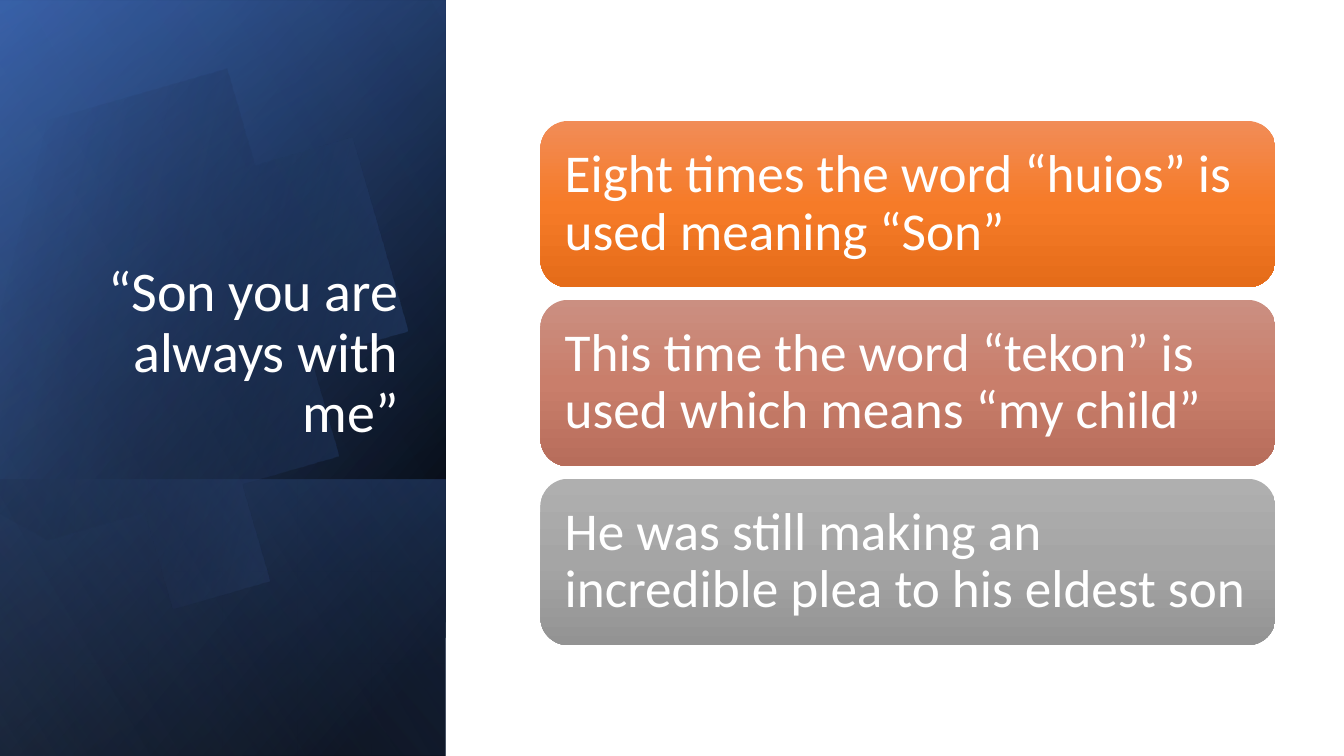
"""Build the slide "Son you are always with me" with a blue side panel and three cards."""
from dataclasses import dataclass
from math import cos, radians, sin

from pptx import Presentation
from pptx.dml.color import RGBColor
from pptx.enum.shapes import MSO_SHAPE as Preset
from pptx.enum.text import MSO_ANCHOR as Anchor, PP_ALIGN as Align
from pptx.oxml import parse_xml
from pptx.oxml.ns import nsdecls, qn
from pptx.util import Inches, Pt

Point = tuple[float, float]
Stop = tuple[float, str, float]


@dataclass
class Gradient:
    angle: float
    stops: list[Stop]


@dataclass
class Panel:
    left: float
    top: float
    width: float
    gradient: Gradient


@dataclass
class Card:
    text: str
    colors: tuple[str, str, str]


PANEL_DEPTH = 4.42
PANELS = [
    Panel(-1.54, 1.54, 7.5, Gradient(50, [(8, "000000", 100), (100, "2F5597", 100)])),
    Panel(-1.54, 1.55, 7.5, Gradient(30, [(0, "000000", 0), (99, "4472C4", 46)])),
    Panel(0.84, 3.92, 2.74, Gradient(130, [(2, "4472C4", 29), (100, "000000", 30)])),
]
TOP_GLOW = Panel(-1.54, 1.54, 7.5, Gradient(120, [(0, "000000", 0), (99, "8FAADC", 11)]))

DISC_TILT = 343.9
DISC_CENTER = (1.585, 3.345)
DISC_GRADIENT = Gradient(30, [(29, "000000", 0), (100, "4472C4", 43)])
DISC_START = (1.49, 1.1)
DISC_SEGMENTS: list[list[Point]] = [
    [(2.46, 1.12), (3.35, 1.77), (3.63, 2.75)],
    [(3.98, 3.97), (3.28, 5.23), (2.07, 5.58)],
    [(1.31, 5.8), (0.53, 5.61), (-0.03, 5.14)],
    [(-0.15, 5.03)],
    [(-0.15, 1.75)],
    [(0, 1.61)],
    [(0.23, 1.42), (0.5, 1.28), (0.8, 1.19)],
    [(1.03, 1.13), (1.26, 1.1), (1.49, 1.1)],
]
CURVE_STEPS = 16

CARDS = [
    Card("Eight times the word “huios” is used meaning “Son”", ("F18C57", "F67B28", "E56C19")),
    Card("This time the word “tekon” is used which means “my child”", ("CB8F81", "C97E6B", "B76D5B")),
    Card("He was still making an incredible plea to his eldest son", ("AFAFAF", "A5A5A5", "939393")),
]
CARD_LEFT, CARD_TOP, CARD_WIDTH, CARD_HEIGHT = 5.36, 1.2, 7.29, 1.65
CARD_PITCH = 1.775


def color(code: str) -> RGBColor:
    """Turn a hex string into a colour."""
    return RGBColor.from_string(code)


def paint(shape, gradient: Gradient) -> None:
    """Fill a shape with a gradient and remove its line and shadow."""
    shape.shadow.inherit = False
    shape.line.fill.background()
    shape.fill.background()
    stops = "".join(
        f'<a:gs pos="{position * 1000}"><a:srgbClr val="{color(code)}">'
        f'<a:alpha val="{opacity * 1000}"/></a:srgbClr></a:gs>'
        for position, code, opacity in gradient.stops
    )
    properties = shape._element.spPr
    properties.replace(properties.find(qn("a:noFill")), parse_xml(
        f'<a:gradFill {nsdecls("a")} rotWithShape="1"><a:gsLst>{stops}</a:gsLst>'
        f'<a:lin ang="{gradient.angle * 60000}" scaled="0"/></a:gradFill>'
    ))


def write(shape, text: str, *, size: float, align: Align, anchor: Anchor,
          side: float, edge: float) -> None:
    """Put white wrapped text into a shape."""
    frame = shape.text_frame
    frame.word_wrap = True
    frame.vertical_anchor = anchor
    frame.margin_left = frame.margin_right = Inches(side)
    frame.margin_top = frame.margin_bottom = Inches(edge)
    paragraph = frame.paragraphs[0]
    paragraph.alignment = align
    paragraph.line_spacing = 0.9
    run = paragraph.add_run()
    run.text = text
    run.font.name = "Calibri"
    run.font.size = Pt(size)
    run.font.color.rgb = color("FFFFFF")


def draw_panel(shapes, panel: Panel) -> None:
    """Draw one mirrored rectangle of the side panel, turned upright."""
    layer = shapes.add_shape(Preset.RECTANGLE, Inches(panel.left), Inches(panel.top),
                             Inches(panel.width), Inches(PANEL_DEPTH))
    layer.rotation = 90
    layer._element.spPr.xfrm.set("flipH", "1")
    paint(layer, panel.gradient)


def untilt(point: Point) -> Point:
    """Turn a point of the disc back to its position before rotation."""
    angle = radians(-DISC_TILT)
    across, down = (value - middle for value, middle in zip(point, DISC_CENTER))
    return (DISC_CENTER[0] + across * cos(angle) - down * sin(angle),
            DISC_CENTER[1] + across * sin(angle) + down * cos(angle))


def bezier(controls: list[Point], t: float) -> Point:
    """Return the point at t on a cubic curve."""
    weights = ((1 - t) ** 3, 3 * t * (1 - t) ** 2, 3 * t ** 2 * (1 - t), t ** 3)
    across, down = (sum(w * value for w, value in zip(weights, axis)) for axis in zip(*controls))
    return across, down


def disc_outline() -> list[Point]:
    """List the points of the cut-off disc."""
    outline = [DISC_START]
    for segment in DISC_SEGMENTS:
        if len(segment) == 1:
            outline += segment
        else:
            controls = [outline[-1], *segment]
            outline += [bezier(controls, step / CURVE_STEPS) for step in range(1, CURVE_STEPS + 1)]
    return [untilt(point) for point in outline]


def draw_disc(shapes) -> None:
    """Draw the tilted disc behind the title."""
    start, *rest = disc_outline()
    builder = shapes.build_freeform(*start, scale=Inches(1))
    builder.add_line_segments(rest, close=True)
    disc = builder.convert_to_shape()
    disc.rotation = DISC_TILT
    paint(disc, DISC_GRADIENT)


def draw_card(shapes, card: Card, top: float) -> None:
    """Draw one rounded card with its statement."""
    box = shapes.add_shape(Preset.ROUNDED_RECTANGLE, Inches(CARD_LEFT), Inches(top),
                           Inches(CARD_WIDTH), Inches(CARD_HEIGHT))
    paint(box, Gradient(90, [(50 * i, code, 100) for i, code in enumerate(card.colors)]))
    write(box, card.text, size=38, align=Align.LEFT, anchor=Anchor.MIDDLE, side=0.16, edge=0.16)


def main() -> None:
    """Assemble and save the slide."""
    deck = Presentation()
    deck.slide_width, deck.slide_height = Inches(13.33), Inches(7.5)
    shapes = deck.slides.add_slide(deck.slide_layouts[6]).shapes
    for panel in PANELS:
        draw_panel(shapes, panel)
    draw_disc(shapes)
    draw_panel(shapes, TOP_GLOW)
    title = shapes.add_textbox(Inches(0.64), Inches(1.84), Inches(3.41), Inches(2.62))
    write(title, "“Son you are always with me”", size=40, align=Align.RIGHT,
          anchor=Anchor.BOTTOM, side=0.1, edge=0.05)
    for row, card in enumerate(CARDS):
        draw_card(shapes, card, CARD_TOP + row * CARD_PITCH)
    deck.save("out.pptx")


if __name__ == "__main__":
    main()
